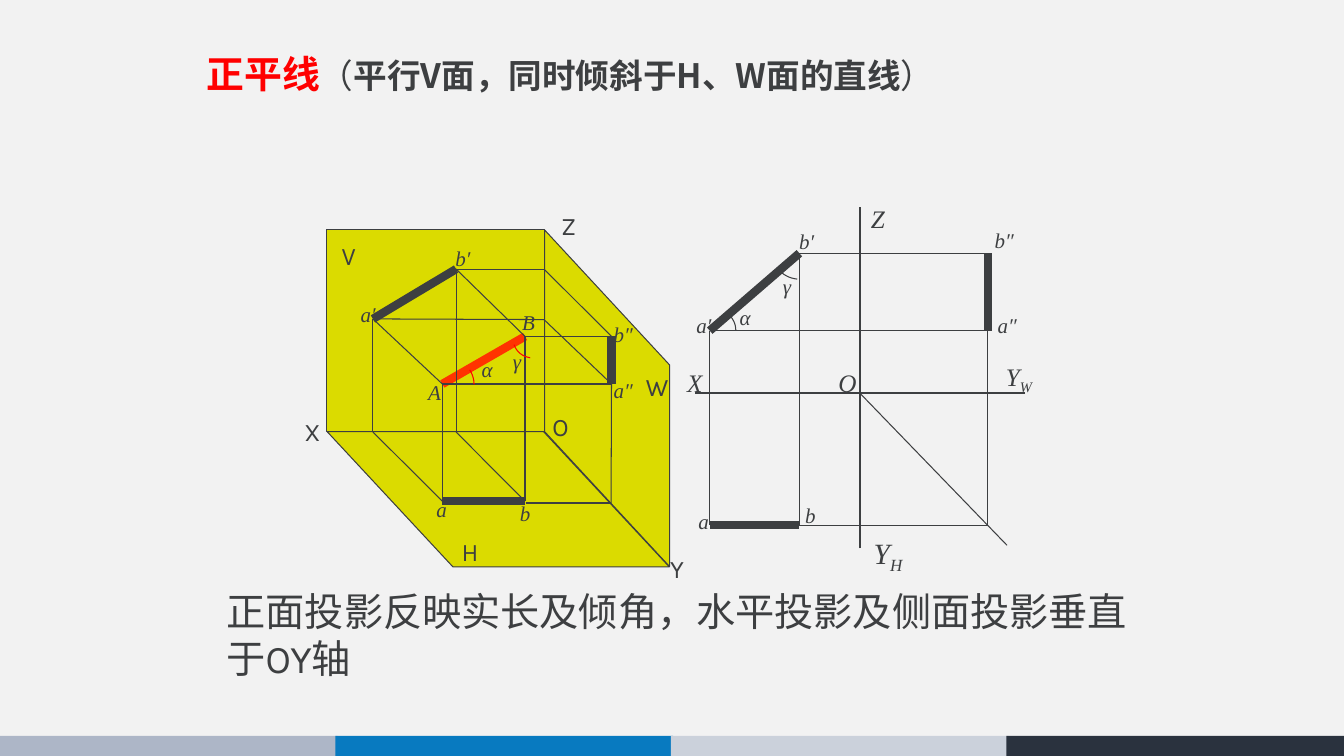
from pptx import Presentation
from pptx.dml.color import RGBColor
from pptx.enum.shapes import MSO_CONNECTOR, MSO_SHAPE
from pptx.oxml.ns import qn
from pptx.util import Pt
from lxml import etree

RECT = MSO_SHAPE.RECTANGLE
PARALLELOGRAM = MSO_SHAPE.PARALLELOGRAM
STRAIGHT = MSO_CONNECTOR.STRAIGHT

PAPER = RGBColor(0xF2, 0xF2, 0xF2)
INK = RGBColor(0x3D, 0x3F, 0x41)
YELLOW = RGBColor(0xDB, 0xDB, 0x00)
RED = RGBColor(0xFF, 0x00, 0x00)
ORANGE_RED = RGBColor(0xFF, 0x33, 0x00)
BANDS = [RGBColor(0xAD, 0xB6, 0xC7), RGBColor(0x08, 0x7A, 0xC0),
         RGBColor(0xCB, 0xD1, 0xDB), RGBColor(0x2A, 0x32, 0x3E)]

SANS, CJK, SERIF = "Karla", "Noto Sans CJK SC", "Times New Roman"
THIN, AXIS, THICK = 0.75, 1.5, 6

# Pictorial view: the line AB, its projections and the feet on the axes
SPACE = {
    "A": (316, 274.3), "B": (375, 240.3),
    "a′": (266.4, 227.8), "b′": (325.8, 192.2),
    "a": (316, 358), "b": (375, 358),
    "a″": (436.8, 274.3), "b″": (436.8, 240.3),
    "ax": (266.4, 308.6), "bx": (325.8, 308.6),
    "az": (388.6, 228.3), "bz": (388.6, 192.2),
    "y": (436.5, 359.3), "by": (375.5, 359.3),
}
SPACE_EDGES = ["A a", "A a′", "A a″", "B b", "B b′", "B b″", "a′ ax", "b′ bx",
               "a′ az", "b′ bz", "az a″", "bz b″", "ax a", "bx b", "a″ y", "by y"]

# Three-view drawing: shared columns and rows
XA, XB, XO, XW = 507, 571, 614.2, 705.6
YB, YA, YO, YH = 180.9, 236.2, 280.8, 375.1

PLANE_LABELS = [("V", 236.9, 167.8), ("W", 454.3, 261.4), ("H", 322.6, 379.4),
                ("X", 210.4, 293.8), ("Y", 471.6, 391.7), ("Z", 393.8, 146.9),
                ("O", 387.4, 290.2)]
POINT_LABELS = [
    ("A", 298.8, 267.8), ("B", 365.8, 217.4), ("α", 337, 251.3), ("γ", 359.3, 245.5),
    ("a", 304.6, 351.4), ("b", 364.3, 354.2), ("a′", 250.6, 211.7),
    ("b′", 318.2, 172.1), ("a″", 431.3, 266.4), ("b″", 431.3, 226.1),
    ("a′", 490.3, 219.6), ("b′", 563.8, 159.8), ("a″", 705.6, 219.6),
    ("b″", 703.4, 159.1), ("a", 491.8, 360), ("b", 568.1, 355.7),
    ("α", 521.3, 213.8), ("γ", 552.2, 191.5)]
AXIS_LABELS = [("X", 483.8, 258.5), ("O", 591.8, 258.5), ("Z", 615, 141.8)]


def add_block(slide, kind, x, y, w, h, fill, outlined=False):
    s = slide.shapes.add_shape(kind, Pt(x), Pt(y), Pt(w), Pt(h))
    s.shadow.inherit = False
    s.fill.solid()
    s.fill.fore_color.rgb = fill
    if outlined:
        s.line.color.rgb = INK
        s.line.width = Pt(THIN)
    else:
        s.line.fill.background()
    return s


def add_line(slide, start, end, width=THIN, color=INK):
    c = slide.shapes.add_connector(STRAIGHT, *map(Pt, start + end))
    c.line.color.rgb = color
    c.line.width = Pt(width)
    etree.SubElement(c._element.spPr, qn("a:effectLst"))


def add_arc(slide, start, bend, end, color, steps=8):
    """Draw an angle mark as a smooth curve pulled towards bend."""
    points = []
    for i in range(steps + 1):
        t = i / steps
        points.append([Pt((1 - t) ** 2 * p + 2 * t * (1 - t) * q + t * t * r)
                       for p, q, r in zip(start, bend, end)])
    builder = slide.shapes.build_freeform(*points[0], scale=1)
    builder.add_line_segments(points[1:], close=False)
    s = builder.convert_to_shape()
    s.shadow.inherit = False
    s.fill.background()
    s.line.color.rgb = color
    s.line.width = Pt(THIN)


def add_text(slide, x, y, w, h, runs):
    """Each run is (text, size, font, color, bold, italic)."""
    tf = slide.shapes.add_textbox(Pt(x), Pt(y), Pt(w), Pt(h)).text_frame
    tf.word_wrap = True
    p = tf.paragraphs[0]
    for text, size, font, color, bold, italic in runs:
        r = p.add_run()
        r.text = text
        r.font.size = Pt(size)
        r.font.name = font
        r.font.color.rgb = color
        r.font.bold = bold
        r.font.italic = italic
    return p


def add_label(slide, text, x, y, size, font=SERIF, subscript=""):
    italic = font == SERIF
    runs = [(t, size, font, INK, False, italic) for t in (text, subscript) if t]
    p = add_text(slide, x, y, 44, size * 1.2 + 7.2, runs)
    if subscript:
        p.runs[1]._r.get_or_add_rPr().set("baseline", "-25000")


def draw_planes(slide):
    w_plane = add_block(slide, PARALLELOGRAM, 313.4, 239.8, 240.5, 89.3, YELLOW, True)
    w_plane.adjustments[0] = 1.08
    w_plane.rotation = 270
    add_block(slide, RECT, 233.5, 164.2, 155.3, 144.2, YELLOW, True)
    h_plane = add_block(slide, PARALLELOGRAM, 233.8, 308.4, 244.3, 96.5, YELLOW, True)
    h_plane.adjustments[0] = 0.93
    h_plane._element.spPr.find(qn("a:xfrm")).set("flipH", "1")


def draw_space_view(slide):
    draw_planes(slide)
    add_line(slide, SPACE["A"], SPACE["B"], THICK, ORANGE_RED)
    for edge in SPACE_EDGES:
        start, end = edge.split()
        add_line(slide, SPACE[start], SPACE[end])
    for mark in ("", "′", "″"):
        add_line(slide, SPACE["a" + mark], SPACE["b" + mark], THICK)
    add_arc(slide, (335.5, 264.2), (338.6, 269), (338.6, 274.6), RED)
    add_arc(slide, (367.2, 246.2), (370, 254), (378.7, 255.6), RED)


def draw_three_views(slide):
    # Axes and the 45° transfer line
    add_line(slide, (XO, 391.7), (XO, 147.6), AXIS)
    add_line(slide, (732.2, YO), (496.1, YO), AXIS)
    add_line(slide, (XO, YO), (719.3, 389.5))
    # Projection lines
    for x, top in ((XA, YA), (XB, YB), (XW, YA)):
        add_line(slide, (x, YH), (x, top))
    for x, y in ((XB, YB), (XA, YA), (XB, YH)):
        add_line(slide, (x, y), (XW, y))
    # Projections of AB
    add_line(slide, (XA, YA), (XB, YB), THICK)
    add_line(slide, (XA, YH), (XB, YH), THICK)
    add_line(slide, (XW, YA), (XW, YB), THICK)
    add_arc(slide, (519.8, 223.9), (525.6, 229), (525.6, 236.2), INK)
    add_arc(slide, (555.8, 192.2), (561, 198.5), (569.5, 199.4), INK)


def main():
    prs = Presentation()
    prs.slide_width, prs.slide_height = Pt(960), Pt(540)
    slide = prs.slides.add_slide(prs.slide_layouts[6])
    slide.background.fill.solid()
    slide.background.fill.fore_color.rgb = PAPER

    # Footer bands
    for i, color in enumerate(BANDS):
        add_block(slide, RECT, i * 239.6, 525.6, 241.2, 14.4, color)

    # Title and conclusion
    add_text(slide, 140.4, 32.4, 579.6, 39.6, [
        ("正平线", 27, SANS, RED, True, False),
        ("（", 24, SANS, INK, False, False),
        ("平行V面，同时倾斜于H、W面的直线", 24, CJK, INK, True, False),
        ("）", 24, SANS, INK, False, False)])
    add_text(slide, 154.8, 416.2, 659.5, 74.9, [
        ("正面投影反映实长及倾角，水平投影及侧面投影垂直于OY轴",
         28, SANS, INK, False, False)])

    # Drawings
    draw_space_view(slide)
    draw_three_views(slide)

    # Labels
    for text, x, y in PLANE_LABELS:
        add_label(slide, text, x, y, 18, SANS)
    for text, x, y in POINT_LABELS:
        add_label(slide, text, x, y, 15)
    for text, x, y in AXIS_LABELS:
        add_label(slide, text, x, y, 18)
    add_label(slide, "Y", 617, 378.7, 21, subscript="H")
    add_label(slide, "Y", 711.4, 254.2, 18, subscript="W")

    prs.save("out.pptx")


if __name__ == "__main__":
    main()
